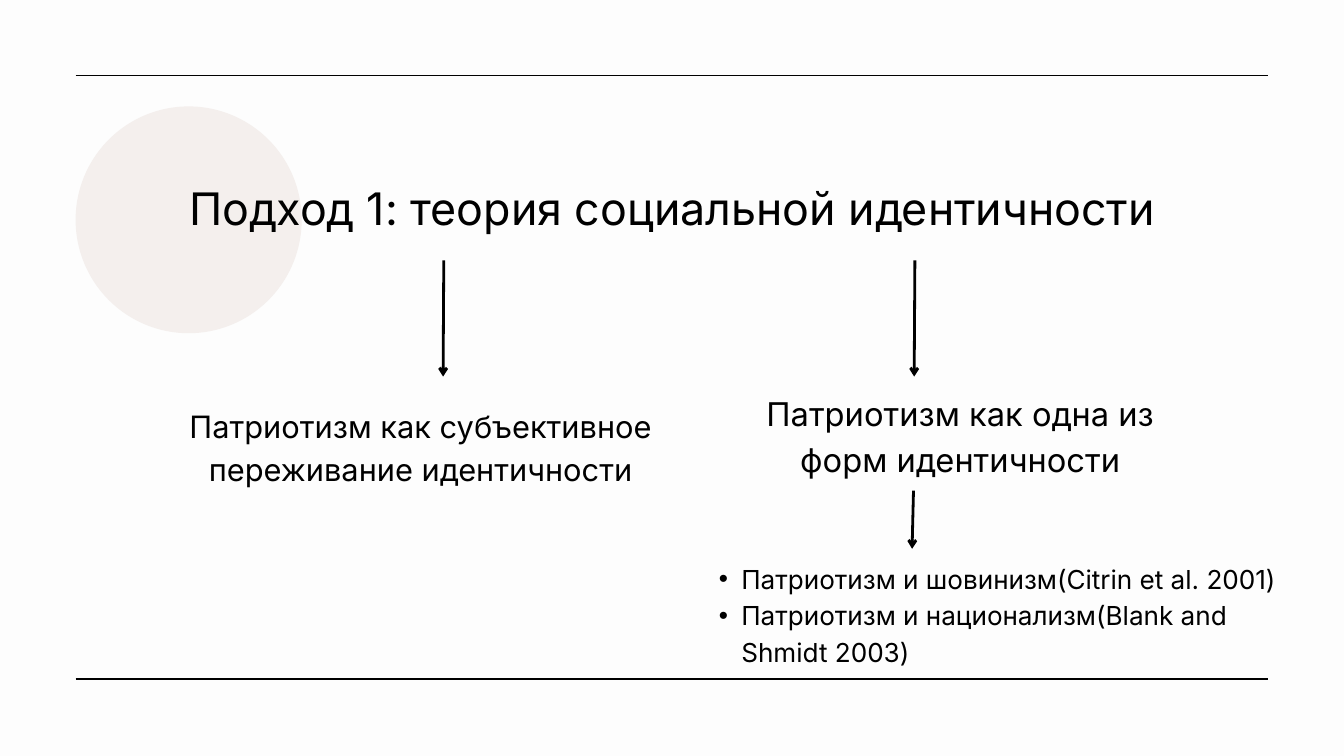
"""Build a slide on the social identity approach to patriotism."""
from lxml import etree
from pptx import Presentation
from pptx.dml.color import RGBColor
from pptx.enum.shapes import MSO_CONNECTOR, MSO_SHAPE
from pptx.enum.text import MSO_ANCHOR, MSO_AUTO_SIZE, PP_ALIGN
from pptx.oxml.ns import qn
from pptx.util import Pt

STRAIGHT = MSO_CONNECTOR.STRAIGHT
OVAL = MSO_SHAPE.OVAL
TOP = MSO_ANCHOR.TOP
NO_AUTOSIZE = MSO_AUTO_SIZE.NONE
LEFT, CENTER = PP_ALIGN.LEFT, PP_ALIGN.CENTER

PX = 9525
THEME = {
    "font": "Inter",
    "ink": RGBColor(0x00, 0x00, 0x00),
    "paper": RGBColor(0xFD, 0xFD, 0xFD),
    "circle": RGBColor(0xF4, 0xEF, 0xED),
    "title": 48,
    "left_branch": 33,
    "right_branch": 35,
    "list": 28,
    "rule": 1.5,
    "arrow": 3,
}


def write_text(box, place, lines, size, align):
    for name, value in zip(("left", "top", "width", "height"), place):
        setattr(box, name, value * PX)
    frame = box.text_frame
    frame_format = {
        "margin_left": 0, "margin_top": 0, "margin_right": 0, "margin_bottom": 0,
        "word_wrap": True, "auto_size": NO_AUTOSIZE, "vertical_anchor": TOP,
    }
    for name, value in frame_format.items():
        setattr(frame, name, value)
    frame.text = "\n".join(lines)
    para_format = {
        "alignment": align, "line_spacing": Pt(round(size * 1.4, 1)),
        "space_before": Pt(0), "space_after": Pt(0),
    }
    font_format = {"name": THEME["font"], "size": Pt(size), "bold": False}
    for para in frame.paragraphs:
        for name, value in para_format.items():
            setattr(para, name, value)
        for span in para.runs:
            for name, value in font_format.items():
                setattr(span.font, name, value)
            span.font.color.rgb = THEME["ink"]


def draw_line(slide, ends, weight):
    line = slide.shapes.add_connector(STRAIGHT, *(end * PX for end in ends))
    line.line.color.rgb = THEME["ink"]
    line.line.width = Pt(weight)
    etree.SubElement(line.element.spPr, qn("a:effectLst"))
    return line


deck = Presentation()
deck.slide_width, deck.slide_height = 1920 * PX, 1080 * PX
slide = deck.slides.add_slide(deck.slide_layouts[1])
slide.background.fill.solid()
slide.background.fill.fore_color.rgb = THEME["paper"]
title, body = slide.placeholders

for y in (970, 108):
    draw_line(slide, (108, y, 1812, y), THEME["rule"])

circle = slide.shapes.add_shape(OVAL, 108 * PX, 152 * PX, 323 * PX, 324 * PX)
circle.shadow.inherit = False
circle.fill.solid()
circle.fill.fore_color.rgb = THEME["circle"]
circle.line.fill.background()

circle.element.addnext(title.element)
write_text(title, (270, 245, 1542, 86), ["Подход 1: теория социальной идентичности"],
           THEME["title"], LEFT)

branches = [
    ((270, 574, 662, 182), "Патриотизм как субъективное переживание идентичности",
     THEME["left_branch"]),
    ((1041, 553, 662, 129), "Патриотизм как одна из форм идентичности",
     THEME["right_branch"]),
]
for place, text, size in branches:
    box = slide.shapes.add_textbox(0, 0, 0, 0)
    write_text(box, place, [text], size, CENTER)

examples = [
    "Патриотизм и шовинизм(Citrin et al. 2001)",
    "Патриотизм и национализм(Blank and Shmidt 2003)",
]
write_text(body, (996, 797, 879, 156), examples, THEME["list"], LEFT)
for para in body.text_frame.paragraphs:
    para.level = 1
    properties = para._p.get_or_add_pPr()
    properties.set("marL", str(63 * PX))
    properties.set("indent", str(-32 * PX))
    etree.SubElement(properties, qn("a:buFont"), typeface="Arial")
    etree.SubElement(properties, qn("a:buChar"), char="•")

for ends in ((1307, 372, 1306, 538), (634, 372, 633, 538), (1305, 701, 1303, 784)):
    arrow = draw_line(slide, ends, THEME["arrow"])
    etree.SubElement(arrow.line._get_or_add_ln(), qn("a:tailEnd"), type="arrow")

deck.save("out.pptx")
